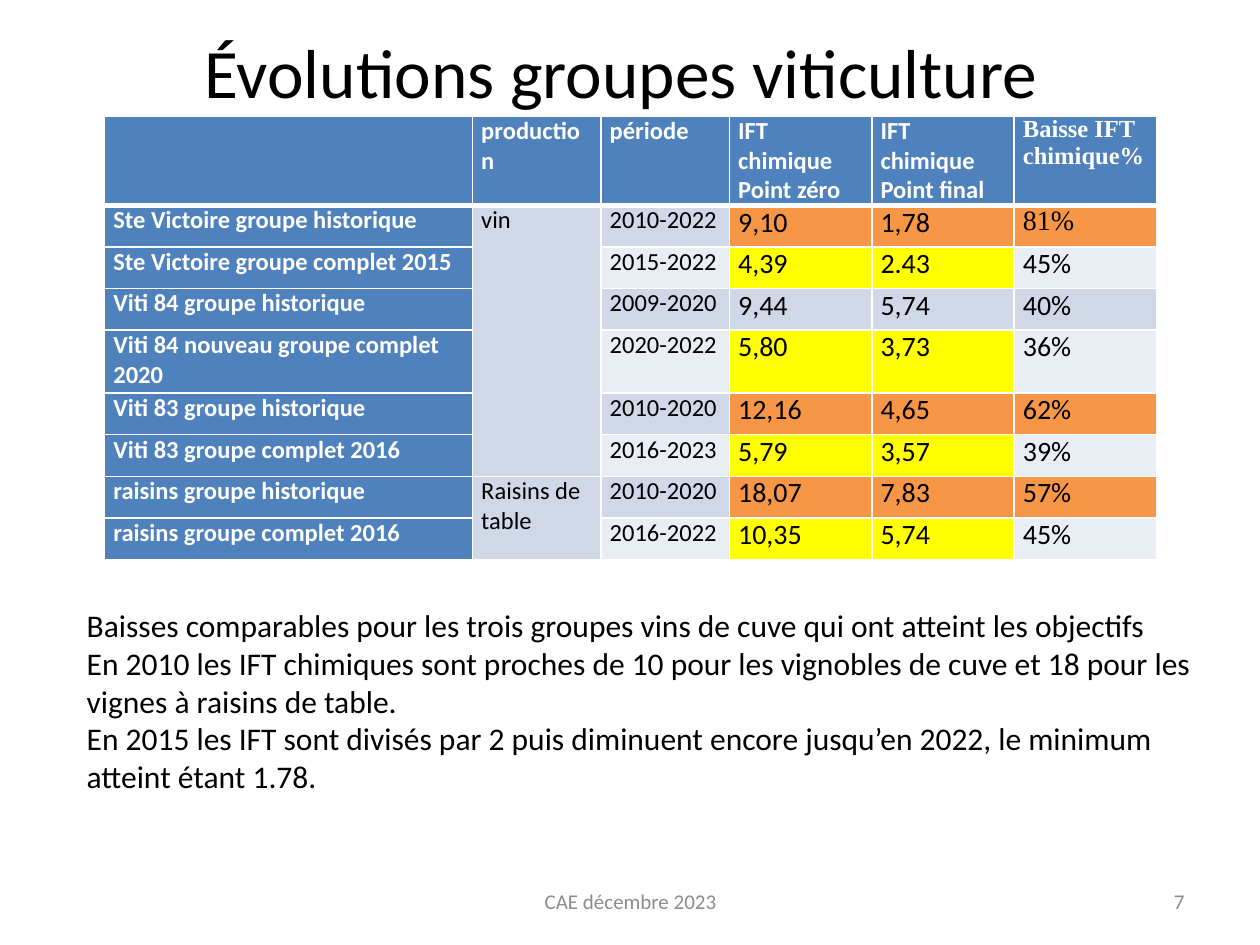
from dataclasses import dataclass

from lxml import etree
from pptx import Presentation
from pptx.dml.color import RGBColor
from pptx.enum.text import MSO_ANCHOR, MSO_AUTO_SIZE, PP_ALIGN
from pptx.oxml.ns import qn
from pptx.util import Inches, Pt

LEFT, CENTER, RIGHT = PP_ALIGN.LEFT, PP_ALIGN.CENTER, PP_ALIGN.RIGHT
TOP, MIDDLE = MSO_ANCHOR.TOP, MSO_ANCHOR.MIDDLE
FIT_SHAPE, NO_FIT = MSO_AUTO_SIZE.SHAPE_TO_FIT_TEXT, MSO_AUTO_SIZE.NONE

BLUE, ORANGE, YELLOW = "4F81BD", "F79646", "FFFF00"
BAND_DARK, BAND_LIGHT = "D0D8E8", "E9EDF4"
BLACK, WHITE, GREY = "000000", "FFFFFF", "8C8C8C"
SANS, SERIF = "Calibri", "Times New Roman"

COLUMN_WIDTHS = [2.92, 1.02, 1.02, 1.13, 1.13, 1.13]
HEADER_HEIGHT, ROW_HEIGHT, TALL_ROW_HEIGHT = 0.65, 0.33, 0.5


@dataclass
class Group:
    name: str
    period: str
    start: str
    end: str
    drop: str
    ift_fill: str = ""  # empty: the band colour of the row
    drop_fill: str = ""
    drop_font: str = SANS
    height: float = ROW_HEIGHT


@dataclass
class Production:
    name: str
    first_row: int
    last_row: int


HEADERS = ["", "production", "période", "IFT chimique\nPoint zéro",
           "IFT chimique\nPoint final", "Baisse IFT chimique%"]
GROUPS = [
    Group("Ste Victoire groupe historique", "2010-2022", "9,10", "1,78", "81%",
          ORANGE, ORANGE, SERIF),
    Group("Ste Victoire groupe complet 2015", "2015-2022", "4,39", "2.43", "45%", YELLOW),
    Group("Viti 84 groupe historique", "2009-2020", "9,44", "5,74", "40%"),
    Group("Viti 84 nouveau groupe complet 2020", "2020-2022", "5,80", "3,73", "36%",
          YELLOW, height=TALL_ROW_HEIGHT),
    Group("Viti 83 groupe historique", "2010-2020", "12,16", "4,65", "62%", ORANGE, ORANGE),
    Group("Viti 83 groupe complet 2016", "2016-2023", "5,79", "3,57", "39%", YELLOW),
    Group("raisins groupe historique", "2010-2020", "18,07", "7,83", "57%", ORANGE, ORANGE),
    Group("raisins groupe complet 2016", "2016-2022", "10,35", "5,74", "45%", YELLOW),
]
PRODUCTIONS = [Production("vin", 1, 6), Production("Raisins de table", 7, 8)]
COMMENTS = (
    "Baisses comparables pour les trois groupes vins de cuve qui ont atteint les objectifs\n"
    "En 2010 les IFT chimiques sont proches de 10 pour les vignobles de cuve et 18 pour les "
    "vignes à raisins de table.\n"
    "En 2015 les IFT sont divisés par 2 puis diminuent encore jusqu’en 2022, le minimum "
    "atteint étant 1.78."
)


def rgb(value: str) -> RGBColor:
    return RGBColor.from_string(value)


def write(frame, text: str, *, size: float, color: str = BLACK, font: str = SANS,
          bold: bool = False, align=LEFT) -> None:
    """Fill a text frame, one paragraph per line of text."""
    frame.text = text
    for paragraph in frame.paragraphs:
        paragraph.alignment = align
        paragraph.font.size = Pt(size)
        for run in paragraph.runs:
            run.font.size = Pt(size)
            run.font.name = font
            run.font.bold = bold
            run.font.color.rgb = rgb(color)


def place(shape, left: float, top: float, width: float, height: float) -> None:
    shape.left, shape.top = Inches(left), Inches(top)
    shape.width, shape.height = Inches(width), Inches(height)


def add_text(slide, box: tuple, text: str, *, anchor=TOP, fit=NO_FIT, **style) -> None:
    frame = slide.shapes.add_textbox(*map(Inches, box)).text_frame
    frame.word_wrap = True
    frame.auto_size = fit
    frame.vertical_anchor = anchor
    write(frame, text, **style)


def draw_borders(cell, top: float = 1, bottom: float = 1) -> None:
    properties = cell._tc.get_or_add_tcPr()
    for tag, width in (("a:lnL", 1), ("a:lnR", 1), ("a:lnT", top), ("a:lnB", bottom)):
        line = etree.SubElement(properties, qn(tag), w=str(Pt(width)))
        fill = etree.SubElement(line, qn("a:solidFill"))
        etree.SubElement(fill, qn("a:srgbClr"), val=WHITE)


def format_cell(cell, text: str, fill: str, *, top: float = 1, bottom: float = 1,
                **style) -> None:
    cell.margin_left = cell.margin_right = Inches(0.07)
    cell.margin_top = cell.margin_bottom = 0
    cell.vertical_anchor = TOP
    draw_borders(cell, top, bottom)
    cell.fill.solid()
    cell.fill.fore_color.rgb = rgb(fill)
    write(cell.text_frame, text, **style)


def draw_table(slide) -> None:
    heights = [HEADER_HEIGHT] + [group.height for group in GROUPS]
    table = slide.shapes.add_table(
        len(heights), len(COLUMN_WIDTHS), Inches(0.83), Inches(0.92),
        Inches(sum(COLUMN_WIDTHS)), Inches(sum(heights))).table
    for column, width in zip(table.columns, COLUMN_WIDTHS):
        column.width = Inches(width)
    for row, height in zip(table.rows, heights):
        row.height = Inches(height)

    # Header row, with a thick rule below
    heading = {"size": 14, "color": WHITE, "bold": True}
    for index, header in enumerate(HEADERS):
        font = SERIF if index == len(HEADERS) - 1 else SANS
        format_cell(table.cell(0, index), header, BLUE, bottom=3, font=font, **heading)

    # One row per group
    production_names = {item.first_row: item.name for item in PRODUCTIONS}
    for row, group in enumerate(GROUPS, start=1):
        band = BAND_DARK if row % 2 else BAND_LIGHT
        ift_fill = group.ift_fill or band
        cells = [
            (group.name, BLUE, heading),
            (production_names.get(row, ""), BAND_DARK, {"size": 14}),
            (group.period, band, {"size": 14}),
            (group.start, ift_fill, {"size": 16}),
            (group.end, ift_fill, {"size": 16}),
            (group.drop, group.drop_fill or band, {"size": 16, "font": group.drop_font}),
        ]
        for column, (text, fill, style) in enumerate(cells):
            format_cell(table.cell(row, column), text, fill,
                        top=3 if row == 1 else 1, **style)

    # Production cells span their groups
    for item in PRODUCTIONS:
        table.cell(item.first_row, 1).merge(table.cell(item.last_row, 1))


def main() -> None:
    presentation = Presentation()
    presentation.slide_width, presentation.slide_height = Inches(10), Inches(7.5)
    slide = presentation.slides.add_slide(presentation.slide_layouts[5])

    # Title
    title = slide.shapes.title
    place(title, 0.43, 0.21, 9, 0.71)
    title.text_frame.auto_size = NO_FIT
    title.text_frame.vertical_anchor = MIDDLE
    write(title.text_frame, "Évolutions groupes viticulture", size=39.6, align=CENTER)

    draw_table(slide)

    # Footer and page number
    footer_style = {"size": 12, "color": GREY, "anchor": MIDDLE}
    add_text(slide, (3.42, 6.95, 3.17, 0.4), "CAE décembre 2023", align=CENTER, **footer_style)
    add_text(slide, (7.17, 6.95, 2.33, 0.4), "7", align=RIGHT, **footer_style)

    # Comments
    add_text(slide, (0.59, 4.76, 9.13, 1.62), COMMENTS, size=18, fit=FIT_SHAPE)

    presentation.save("out.pptx")


if __name__ == "__main__":
    main()
